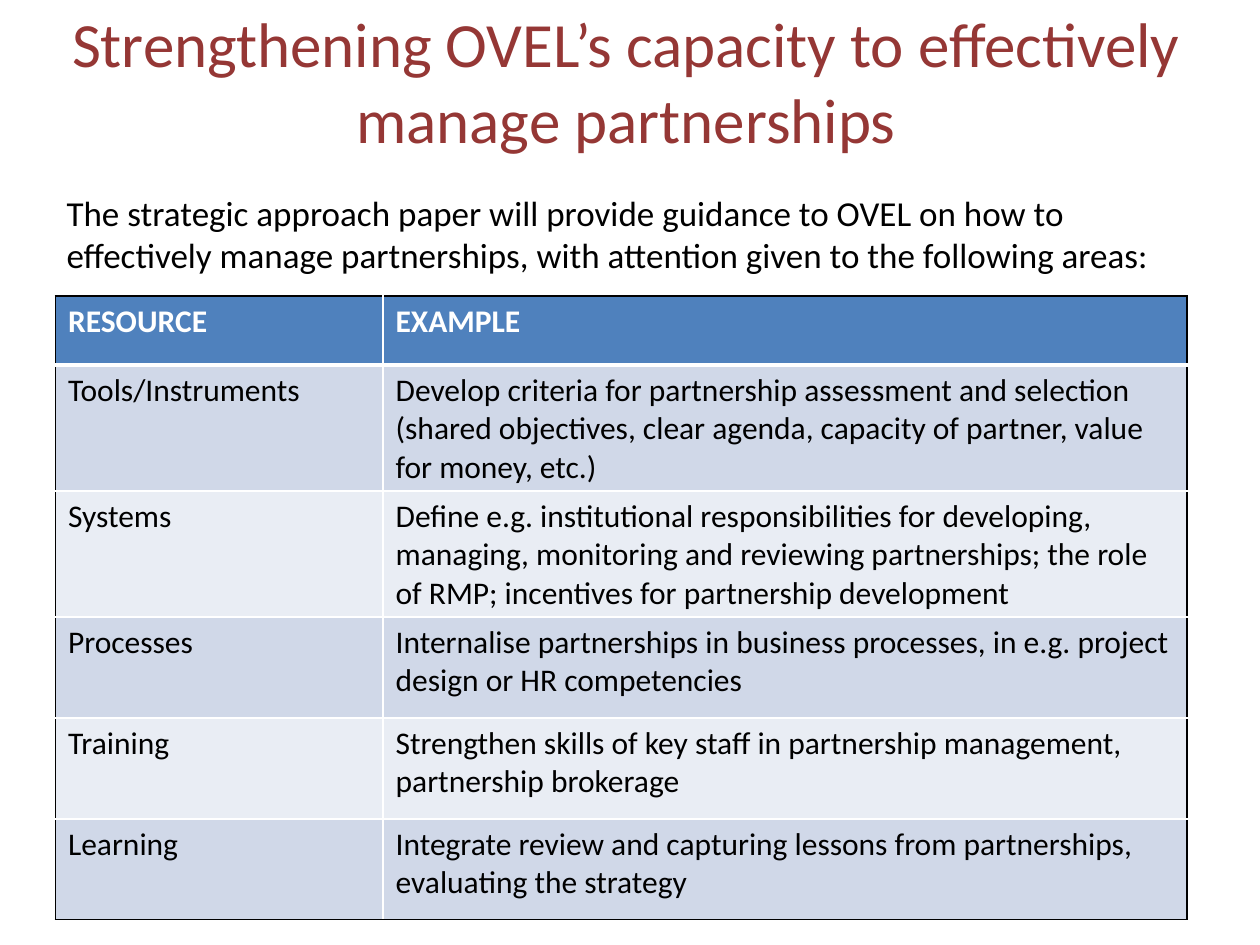
from lxml import etree
from pptx import Presentation, util as u
from pptx.dml.color import RGBColor
from pptx.enum import text
from pptx.oxml import ns

WIDTH, HEIGHT = u.Inches(10), u.Inches(7.5)
FONT = "Calibri"
BLACK = RGBColor(0x00, 0x00, 0x00)
WHITE = RGBColor(0xFF, 0xFF, 0xFF)
DARK_RED = RGBColor(0x95, 0x37, 0x35)
HEADER_BLUE = RGBColor(0x4F, 0x81, 0xBD)
BANDS = (RGBColor(0xE9, 0xED, 0xF4), RGBColor(0xD0, 0xD8, 0xE8))

TITLE = "Strengthening OVEL’s capacity to effectively manage partnerships"
INTRO = ("The strategic approach paper will provide guidance to OVEL on how to "
         "effectively manage partnerships, with attention given to the following areas:")
ROWS = [
    ("RESOURCE", "EXAMPLE"),
    ("Tools/Instruments",
     "Develop criteria for partnership assessment and selection "
     "(shared objectives, clear agenda, capacity of partner, value for money, etc.)"),
    ("Systems",
     "Define e.g. institutional responsibilities for developing, managing, monitoring "
     "and reviewing partnerships; the role of RMP; incentives for partnership development"),
    ("Processes",
     "Internalise partnerships in business processes, in e.g. project design "
     "or HR competencies"),
    ("Training",
     "Strengthen skills of key staff in partnership management, partnership brokerage"),
    ("Learning",
     "Integrate review and capturing lessons from partnerships, evaluating the strategy"),
]
COLUMN_WIDTHS = (2.6, 6.38)
HEADER_HEIGHT, ROW_HEIGHT = 0.55, 0.8


def share(left, top, width, height):
    """Turn shares of the slide's size into lengths."""
    return (int(left * WIDTH), int(top * HEIGHT),
            int(width * WIDTH), int(height * HEIGHT))


def write(frame, words, font, color, para_format=None):
    para = frame.paragraphs[0]
    for name, value in (para_format or {}).items():
        setattr(para, name, value)
    span = para.add_run()
    span.text = words
    for name, value in {"name": FONT, **font}.items():
        setattr(span.font, name, value)
    span.font.color.rgb = color


def add_text(page, place, words, size, color, frame_format, para_format=None):
    frame = page.shapes.add_textbox(*share(*place)).text_frame
    for name, value in {"word_wrap": True, **frame_format}.items():
        setattr(frame, name, value)
    write(frame, words, {"size": u.Pt(size)}, color, para_format)


def set_border(cell, side, color, points):
    line = etree.SubElement(cell._tc.get_or_add_tcPr(), ns.qn(f"a:ln{side}"),
                            w=str(u.Pt(points)))
    fill = etree.SubElement(line, ns.qn("a:solidFill"))
    etree.SubElement(fill, ns.qn("a:srgbClr"), val=str(color))


def style_cell(cell, row, column):
    """Black outer edges, white inner lines, thicker below the header."""
    last_row, last_column = len(ROWS) - 1, len(COLUMN_WIDTHS) - 1
    outer = {"L": column == 0, "R": column == last_column,
             "T": row == 0, "B": row == last_row}
    for side, is_outer in outer.items():
        under_header = (side, row) in (("B", 0), ("T", 1))
        set_border(cell, side, BLACK if is_outer else WHITE, 3 if under_header else 1)
    cell.fill.solid()
    cell.fill.fore_color.rgb = HEADER_BLUE if row == 0 else BANDS[row % 2]


def add_resource_table(page, place):
    table = page.shapes.add_table(len(ROWS), len(COLUMN_WIDTHS), *share(*place)).table
    for column, width in zip(table.columns, COLUMN_WIDTHS):
        column.width = u.Inches(width)
    for row, entries in enumerate(ROWS):
        header = row == 0
        table.rows[row].height = u.Inches(HEADER_HEIGHT if header else ROW_HEIGHT)
        spacing = {} if header else {"space_before": u.Pt(6), "space_after": u.Pt(6)}
        for column, words in enumerate(entries):
            cell = table.cell(row, column)
            style_cell(cell, row, column)
            write(cell.text_frame, words, {"size": u.Pt(18), "bold": header},
                  WHITE if header else BLACK, spacing)


def main():
    deck = Presentation()
    deck.slide_width, deck.slide_height = WIDTH, HEIGHT
    page = deck.slides.add_slide(deck.slide_layouts[6])

    # Title
    add_text(page, (0.047, 0, 0.9, 0.17), TITLE, 36, DARK_RED,
             {"vertical_anchor": text.MSO_ANCHOR.MIDDLE},
             {"alignment": text.PP_ALIGN.CENTER})

    # Resources and examples
    add_resource_table(page, (0.044, 0.313, 0.898, 0.607))

    # Introduction
    add_text(page, (0.043, 0.196, 0.89, 0.103), INTRO, 20, BLACK,
             {"auto_size": text.MSO_AUTO_SIZE.SHAPE_TO_FIT_TEXT})

    deck.save("out.pptx")


if __name__ == "__main__":
    main()
